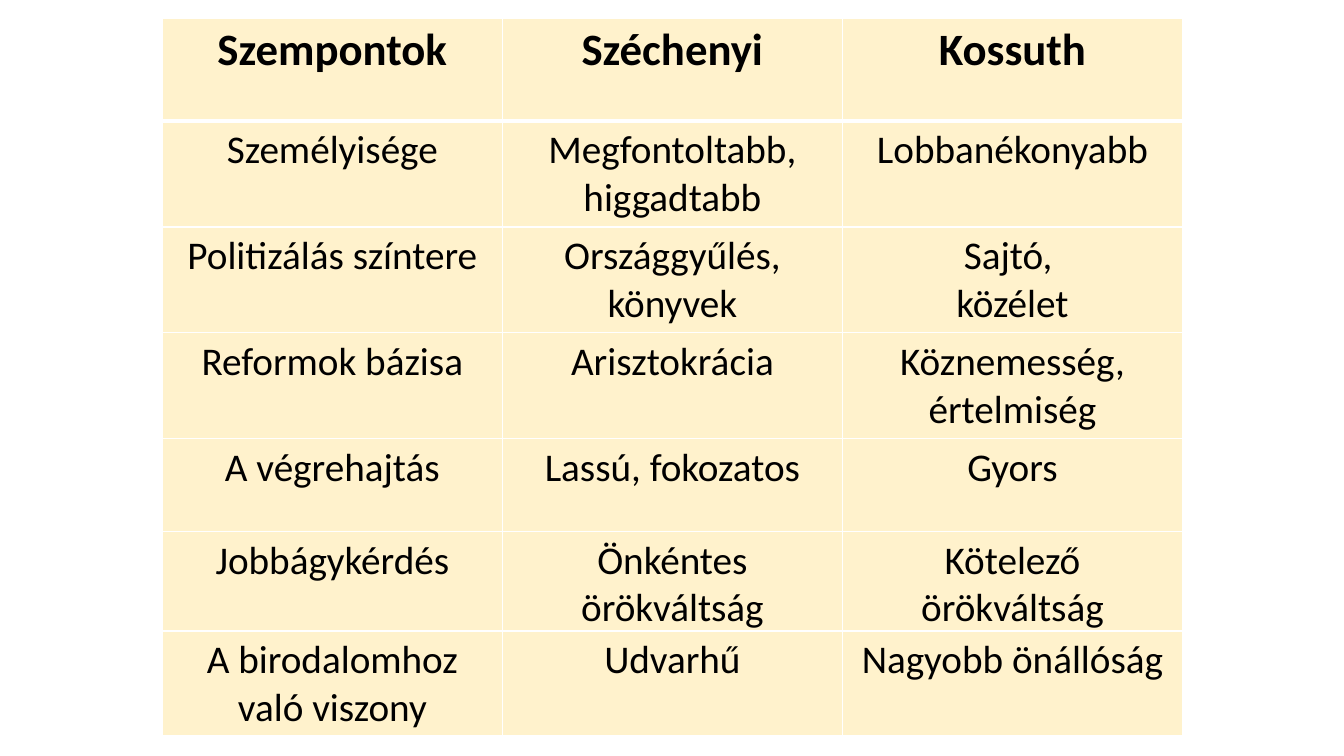
from lxml.etree import SubElement
from pptx import Presentation
from pptx.dml.color import RGBColor
from pptx.enum.text import PP_ALIGN as Align
from pptx.oxml.ns import qn
from pptx.util import Cm, Pt

COLORS = {"cell": "FFF2CC", "text": "000000", "border": "FFFFFF"}
FONT = "Calibri"
LEFT, COLUMN_WIDTH = 4.09, 8.57
ROW_HEIGHT, SHORT_ROW_HEIGHT = 2.59, 2.34

HEADINGS = ["Szempontok", "Széchenyi", "Kossuth"]
COMPARISON = [
    ["Személyisége", "Megfontoltabb, higgadtabb", "Lobbanékonyabb"],
    ["Politizálás színtere", "Országgyűlés, könyvek", "Sajtó, \nközélet"],
    ["Reformok bázisa", "Arisztokrácia", "Köznemesség, értelmiség"],
    ["A végrehajtás", "Lassú, fokozatos", "Gyors"],
    ["Jobbágykérdés", "Önkéntes örökváltság", "Kötelező örökváltság"],
]
EMPIRE = [["A birodalomhoz való viszony", "Udvarhű", "Nagyobb önállóság"]]


def write_text(frame, text, size=28, bold=False, color="text", align=Align.CENTER):
    frame.text = text
    for para in frame.paragraphs:
        para.alignment = align
        for span in para.runs:
            span.font.name = FONT
            span.font.size = Pt(size)
            span.font.bold = bold
            span.font.color.rgb = RGBColor.from_string(COLORS[color])


def set_borders(cell, bottom=1):
    properties = cell._tc.get_or_add_tcPr()
    for side, width in {"L": 1, "R": 1, "T": 1, "B": bottom}.items():
        line = SubElement(properties, qn(f"a:ln{side}"), w=str(Pt(width)))
        fill = SubElement(line, qn("a:solidFill"))
        SubElement(fill, qn("a:srgbClr"), val=COLORS["border"])


def add_grid(page, top, rows, heights, thick_row=0, headed=False):
    """Add a table whose thick_row has a heavy lower border."""
    columns = len(rows[0])
    table = page.shapes.add_table(
        len(rows), columns, Cm(LEFT), Cm(top),
        Cm(COLUMN_WIDTH * columns), Cm(sum(heights))).table
    table.first_row = headed
    table.horz_banding = False
    for column in table.columns:
        column.width = Cm(COLUMN_WIDTH)
    for index, (texts, height) in enumerate(zip(rows, heights)):
        table.rows[index].height = Cm(height)
        heading = headed and index == 0
        for cell, text in zip(table.rows[index].cells, texts):
            # Borders come before the fill in the cell properties
            set_borders(cell, bottom=3 if index == thick_row else 1)
            cell.fill.solid()
            cell.fill.fore_color.rgb = RGBColor.from_string(COLORS["cell"])
            write_text(cell.text_frame, text, size=32 if heading else 28, bold=heading)


def main():
    deck = Presentation()
    deck.slide_width, deck.slide_height = Cm(33.87), Cm(19.05)
    page = deck.slides.add_slide(deck.slide_layouts[6])

    # Main comparison, with its heading row
    heights = [ROW_HEIGHT] * 4 + [SHORT_ROW_HEIGHT, ROW_HEIGHT]
    add_grid(page, 0.46, [HEADINGS] + COMPARISON, heights, headed=True)

    # Closing row on the relation to the empire
    add_grid(page, 15.9, EMPIRE, [ROW_HEIGHT])

    deck.save("out.pptx")


if __name__ == "__main__":
    main()
